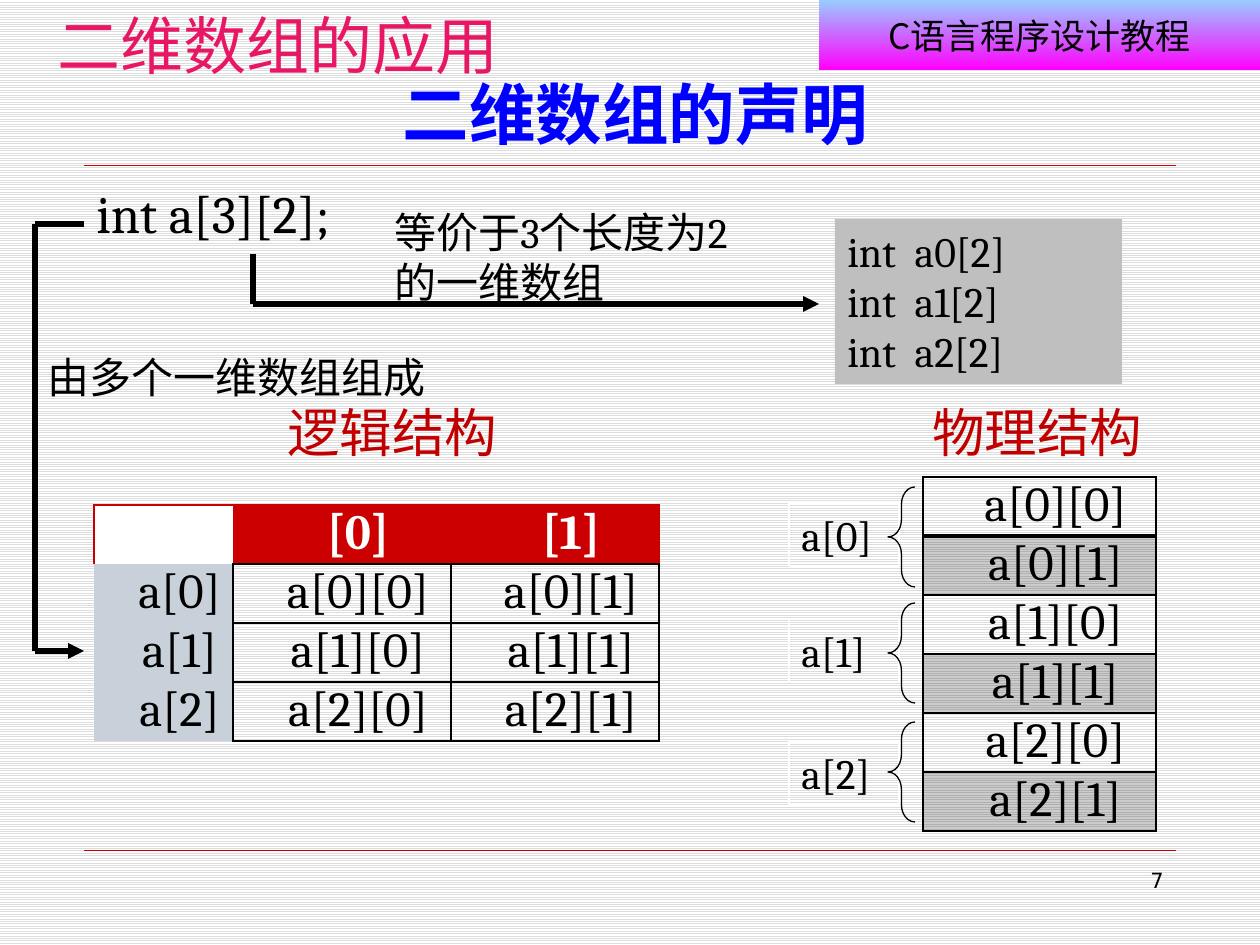
from lxml import etree
from pptx import Presentation
from pptx.dml.color import RGBColor
from pptx.enum.dml import MSO_PATTERN
from pptx.enum.shapes import MSO_CONNECTOR, MSO_SHAPE
from pptx.enum.text import MSO_ANCHOR, PP_ALIGN
from pptx.oxml.ns import qn
from pptx.util import Pt

EMU_PER_PX = 914400 / 126
STRIPES = MSO_PATTERN.LIGHT_HORIZONTAL
STRAIGHT = MSO_CONNECTOR.STRAIGHT
RECT, BRACE = MSO_SHAPE.RECTANGLE, MSO_SHAPE.LEFT_BRACE
LEFT, CENTER, RIGHT = PP_ALIGN.LEFT, PP_ALIGN.CENTER, PP_ALIGN.RIGHT
JUSTIFY = PP_ALIGN.JUSTIFY
TOP, MIDDLE, BOTTOM = MSO_ANCHOR.TOP, MSO_ANCHOR.MIDDLE, MSO_ANCHOR.BOTTOM
BLACK, RED, WHITE = "000000", "CC0000", "FFFFFF"
SERIF, SANS = "Cambria", "DejaVu Sans"
CJK_SC, CJK_JP = "Noto Sans CJK SC", "Noto Sans CJK JP"
GRID = dict.fromkeys("LRTB", (BLACK, 1))


def px(*lengths):
    return [round(length * EMU_PER_PX) for length in lengths]


def rgb(value):
    return RGBColor.from_string(value)


def write(frame, lines, size, font=SERIF, color=BLACK, align=LEFT, bold=False,
          anchor=TOP, wrap=True):
    frame.word_wrap = wrap
    frame.vertical_anchor = anchor
    frame.text = "\n".join(lines)
    for paragraph in frame.paragraphs:
        paragraph.alignment = align
        style_font(paragraph.font, size, font, color, bold)


def style_font(font, size, name, color, bold=False):
    font.size, font.name, font.bold = Pt(size), name, bold
    font.color.rgb = rgb(color)


def add_text(slide, box, lines, size, **style):
    text_box = slide.shapes.add_textbox(*px(*box))
    write(text_box.text_frame, lines, size, **style)
    return text_box.text_frame


def add_outline(slide, kind, box, line=None):
    """Add an unfilled shape, with a thin line if a colour is given."""
    shape = slide.shapes.add_shape(kind, *px(*box))
    shape.shadow.inherit = False
    shape.fill.background()
    if line:
        shape.line.color.rgb = rgb(line)
        shape.line.width = Pt(0.75)
    else:
        shape.line.fill.background()
    return shape


def add_path(slide, points, color=BLACK, width=3, arrow=True):
    """Join the points with straight lines, the last one with an arrowhead."""
    for start, end in zip(points, points[1:]):
        segment = slide.shapes.add_connector(STRAIGHT, *px(*start, *end))
        segment.line.color.rgb = rgb(color)
        segment.line.width = Pt(width)
        properties = segment._element.spPr
        etree.SubElement(properties, qn("a:effectLst"))
        if arrow and end == points[-1]:
            etree.SubElement(segment.line._get_or_add_ln(), qn("a:tailEnd"), type="triangle")


def style_cell(cell, text="", fill=None, alpha=None, borders=GRID, color=BLACK, bold=False):
    cell.margin_left = cell.margin_right = px(9)[0]
    cell.margin_top = cell.margin_bottom = 0
    write(cell.text_frame, [text], 28, color=color, align=CENTER, bold=bold)
    cell.text_frame.paragraphs[0]._p.get_or_add_pPr().set("indent", str(px(32)[0]))
    if fill:
        cell.fill.solid()
        cell.fill.fore_color.rgb = rgb(fill)
    else:
        cell.fill.background()
    properties = cell._tc.get_or_add_tcPr()
    if alpha:
        tint = properties.find(".//" + qn("a:srgbClr"))
        etree.SubElement(tint, qn("a:alpha"), val=str(alpha * 1000))
    for index, side in enumerate("LRTB"):
        border = etree.Element(qn("a:ln" + side))
        properties.insert(index, border)
        if side in borders:
            line_color, width = borders[side]
            border.set("w", str(Pt(width)))
            solid = etree.SubElement(border, qn("a:solidFill"))
            etree.SubElement(solid, qn("a:srgbClr"), val=line_color)
        else:
            etree.SubElement(border, qn("a:noFill"))


def add_grid(slide, left, top, widths, row_count, row_height=59):
    frame = slide.shapes.add_table(row_count, len(widths),
                                   *px(left, top, sum(widths), row_count * row_height))
    table = frame.table
    table.first_row = table.horz_banding = False
    for column, width in zip(table.columns, px(*widths)):
        column.width = width
    for row in table.rows:
        row.height = px(row_height)[0]
    return table


def add_header(slide):
    banner = add_outline(slide, RECT, (819, 0, 441, 70))
    banner.fill.gradient()
    banner.fill.gradient_angle = 270
    for stop, color in zip(banner.fill.gradient_stops, ("99CCFF", "FF00FF")):
        stop.color.rgb = rgb(color)
    write(banner.text_frame, ["C语言程序设计教程"], 20, font=CJK_SC, align=CENTER, anchor=MIDDLE)
    add_text(slide, (25, 0, 507, 52), ["二维数组的应用"], 36, font=CJK_JP,
             color="E81766", align=CENTER, wrap=False)
    add_text(slide, (84, 66, 1103, 93), ["二维数组的声明"], 38, font=SANS,
             color="0000FF", align=CENTER, bold=True, anchor=BOTTOM)


def add_rules_and_number(slide):
    for y in (165, 850):
        add_path(slide, [(84, y), (1176, y)], color=RED, width=0.25, arrow=False)
    add_text(slide, (903, 861, 273, 66), ["7"], 12, font=SANS, align=RIGHT)


def add_body(slide):
    """Write the declaration and, on tab stops, the two structure headings."""
    body = add_text(slide, (84, 175, 1103, 665),
                    ["int a[3][2];", "\t逻辑结构\t物理结构"], 30)
    headings = body.paragraphs[1]
    headings.space_before = Pt(89)
    headings.font.color.rgb = rgb("C00000")
    tabs = etree.Element(qn("a:tabLst"))
    for position in px(191, 836):
        etree.SubElement(tabs, qn("a:tab"), pos=str(position), algn="l")
    headings._p.pPr.find(qn("a:defRPr")).addprevious(tabs)


def add_logical_table(slide, left, top):
    table = add_grid(slide, left, top, (139, 218, 208), 4)
    edge = ("C80000", 0.75)
    style_cell(table.cell(0, 0), fill=WHITE, borders={"L": edge, "T": edge})
    for column in (1, 2):
        borders = {"T": edge, "B": (BLACK, 1)}
        if column == 2:
            borders["R"] = edge
        style_cell(table.cell(0, column), f"[{column - 1}]", RED,
                   borders=borders, color=WHITE, bold=True)
    for i in range(3):
        style_cell(table.cell(i + 1, 0), f"a[{i}]", "C8D1DA", borders={"R": (BLACK, 1)})
        for j in range(2):
            style_cell(table.cell(i + 1, j + 1), f"a[{i}][{j}]")


def add_physical_table(slide, left, top):
    table = add_grid(slide, left, top, (164, 233), 6)
    for row in range(6):
        i, j = divmod(row, 2)
        style_cell(table.cell(row, 0), borders={"R": (BLACK, 1)})
        borders = {**GRID, "B": (BLACK, 2)} if row == 0 else GRID
        shade = {"fill": BLACK, "alpha": 20} if j else {}
        style_cell(table.cell(row, 1), f"a[{i}][{j}]", borders=borders, **shade)
    for i, (label_top, brace_top) in enumerate([(26, 10), (142, 126), (264, 245)]):
        label = add_outline(slide, RECT, (left + 30, top + label_top, 110, 63), WHITE)
        write(label.text_frame, [f"a[{i}]"], 24, align=JUSTIFY)
        brace = add_outline(slide, BRACE, (left + 129, top + brace_top, 27, 100), BLACK)
        brace.adjustments[0] = 0.64


def add_equivalents(slide):
    add_path(slide, [(84, 224), (35, 224), (35, 651), (84, 651)])
    add_path(slide, [(253, 254), (253, 304), (819, 304)])
    arrays = add_outline(slide, RECT, (835, 219, 287, 165))
    arrays.fill.solid()
    arrays.fill.fore_color.rgb = rgb("BFBFBF")
    write(arrays.text_frame, [f"int  a{i}[2]" for i in range(3)], 24)
    add_text(slide, (35, 345, 407, 63), ["由多个一维数组组成"], 24, wrap=False)
    add_text(slide, (382, 200, 369, 115), ["等价于3个长度为2", "的一维数组"], 24)


def main():
    deck = Presentation()
    deck.slide_width, deck.slide_height = px(1260, 945)
    slide = deck.slides.add_slide(deck.slide_layouts[6])
    background = slide.background.fill
    background.patterned()
    background.pattern = STRIPES
    background.fore_color.rgb = rgb("DDDDDD")
    background.back_color.rgb = rgb(WHITE)
    add_rules_and_number(slide)
    add_body(slide)
    add_logical_table(slide, 94, 505)
    add_physical_table(slide, 759, 477)
    add_header(slide)
    add_equivalents(slide)
    deck.save("out.pptx")


if __name__ == "__main__":
    main()
